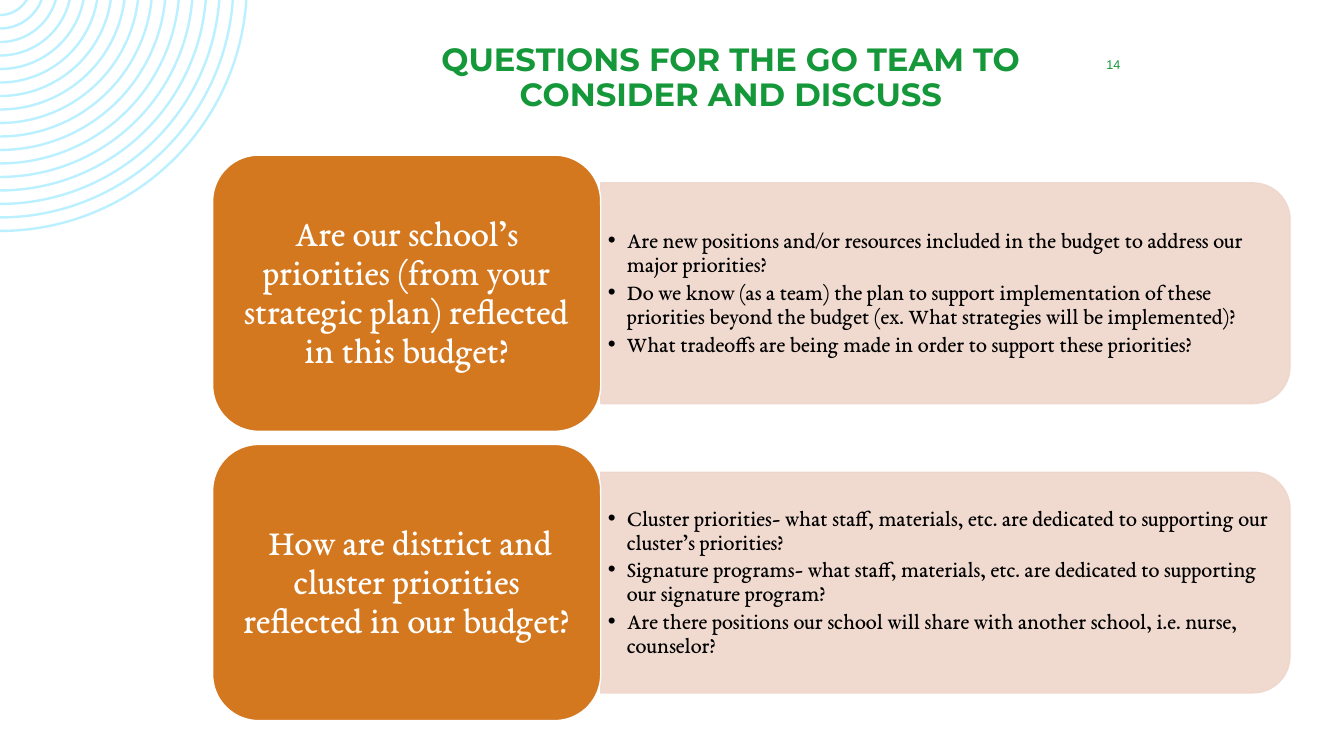
import math
from dataclasses import dataclass

import pptx
import pptx.dml.color
import pptx.enum.shapes
import pptx.enum.text
import pptx.oxml
import pptx.oxml.ns
import pptx.util
from pptx.util import Cm

ALIGN = pptx.enum.text.PP_ALIGN
ANCHOR = pptx.enum.text.MSO_ANCHOR
SHAPE = pptx.enum.shapes.MSO_SHAPE
NAMESPACE = pptx.oxml.ns.nsdecls("a")


@dataclass(frozen=True)
class Theme:
    green: str = "159839"
    orange: str = "D4781F"
    blush: str = "EFD6CB"
    sky: str = "BAF0FF"
    white: str = "FFFFFF"
    black: str = "000000"
    heading_font: str = "Montserrat"
    body_font: str = "EB Garamond"
    number_font: str = "Arial"
    heading_size: float = 23
    question_size: float = 26
    point_size: float = 16
    number_size: float = 9


THEME = Theme()

TOPICS = [
    ("Are our school’s priorities (from your strategic plan) reflected in this budget?", [
        "Are new positions and/or resources included in the budget to address our major priorities?",
        "Do we know (as a team) the plan to support implementation of these priorities "
        "beyond the budget (ex. What strategies will be implemented)?",
        "What tradeoffs are being made in order to support these priorities?",
    ]),
    (" How are district and cluster priorities reflected in our budget?", [
        "Cluster priorities- what staff, materials, etc. are dedicated to supporting our "
        "cluster’s priorities?",
        "Signature programs- what staff, materials, etc. are dedicated to supporting our "
        "signature program?",
        "Are there positions our school will share with another school, i.e. nurse, counselor?",
    ]),
]

CARD_LEFT, CARD_WIDTH, CARD_HEIGHT = 5.36, 9.78, 6.96
PANEL_LEFT, PANEL_WIDTH, PANEL_HEIGHT = 15.14, 17.37, 5.56
LIST_WIDTH, LIST_HEIGHT = 17.12, 5.0
FIRST_MIDDLE, ROW_PITCH = 7.39, 7.29
CORNER = 0.167
RING_COUNT, RING_PITCH, RING_WIDTH = 17, 340, 60
RING_START, RING_RISE = 810, 400


def rgb(color):
    return pptx.dml.color.RGBColor.from_string(color)


def place(shape, left, top, width, height):
    shape.left, shape.top = Cm(left), Cm(top)
    shape.width, shape.height = Cm(width), Cm(height)


def set_frame(shape, side, edge, anchor):
    frame = shape.text_frame
    frame.word_wrap = True
    frame.auto_size = pptx.enum.text.MSO_AUTO_SIZE.NONE
    frame.vertical_anchor = anchor
    frame.margin_left = frame.margin_right = Cm(side)
    frame.margin_top = frame.margin_bottom = Cm(edge)
    return frame


def add_text(para, text, font, size, color, bold=False, align=ALIGN.CENTER):
    para.alignment = align
    para.line_spacing = 0.9
    span = para.add_run()
    span.text = text
    span.font.name = font
    span.font.size = pptx.util.Pt(size)
    span.font.color.rgb = rgb(color)
    span.font.bold = bold


def add_bullet(para, color):
    properties = para._p.get_or_add_pPr()
    properties.set("marL", str(Cm(0.48)))
    properties.set("indent", str(-Cm(0.48)))
    for markup in (
        f'<a:buClr {NAMESPACE}><a:srgbClr val="{color}"/></a:buClr>',
        f'<a:buFont {NAMESPACE} typeface="Arial"/>',
        f'<a:buChar {NAMESPACE} char="•"/>',
    ):
        properties.append(pptx.oxml.parse_xml(markup))


def paint(shape, fill, line=None):
    shape.shadow.inherit = False
    shape.fill.solid()
    shape.fill.fore_color.rgb = rgb(fill)
    if line is None:
        shape.line.fill.background()
    else:
        shape.line.color.rgb = rgb(line)
        shape.line.width = pptx.util.Pt(1)


def bend(edge, radius, start, sweep):
    edge.getparent().replace(edge, pptx.oxml.parse_xml(
        f'<a:arcTo {NAMESPACE} wR="{radius}" hR="{radius}" '
        f'stAng="{round(start * 60000)}" swAng="{round(sweep * 60000)}"/>'))


def add_rings(page):
    def ends(radius):
        reach = round(math.sqrt(radius ** 2 - RING_RISE ** 2))
        return [(reach, 0), (0, radius - RING_RISE)]

    radii = [RING_START + RING_PITCH * ring for ring in range(RING_COUNT)]
    bands = [ends(radius) + ends(radius - RING_WIDTH)[::-1] for radius in radii]
    builder = page.shapes.build_freeform(*bands[0][0], scale=Cm(1) / 1000)
    for index, band in enumerate(bands):
        if index:
            builder.move_to(*band[0])
        builder.add_line_segments(band[1:], close=True)
    rings = builder.convert_to_shape()
    edges = list(rings._element.iter(pptx.oxml.ns.qn("a:lnTo")))
    for radius, outer, inner in zip(radii, edges[0::3], edges[2::3]):
        start = math.degrees(math.asin(RING_RISE / radius))
        bend(outer, radius, start, 90 - start)
        inner_radius = radius - RING_WIDTH
        inner_start = math.degrees(math.asin(RING_RISE / inner_radius))
        bend(inner, inner_radius, 90, inner_start - 90)
    paint(rings, THEME.sky)


def add_title(page, text):
    title = page.shapes.title
    place(title, 8.81, 0.97, 19.23, 2.13)
    frame = set_frame(title, 0.25, 0.13, ANCHOR.TOP)
    add_text(frame.paragraphs[0], text, THEME.heading_font, THEME.heading_size,
             THEME.green, bold=True)


def add_page_number(page, text):
    box = page.shapes.add_textbox(Cm(27.03), Cm(1.27), Cm(2.06), Cm(0.76))
    frame = set_frame(box, 0.25, 0.13, ANCHOR.MIDDLE)
    add_text(frame.paragraphs[0], text, THEME.number_font, THEME.number_size, THEME.green)


def add_panel(page, middle):
    panel = page.shapes.add_shape(SHAPE.ROUND_2_SAME_RECTANGLE, 0, 0, 0, 0)
    place(panel, PANEL_LEFT + (PANEL_WIDTH - PANEL_HEIGHT) / 2, middle - PANEL_WIDTH / 2,
          PANEL_HEIGHT, PANEL_WIDTH)
    panel.rotation = 90
    panel.adjustments[0] = CORNER
    paint(panel, THEME.blush, THEME.blush)
    for color in panel._element.spPr.iter(pptx.oxml.ns.qn("a:srgbClr")):
        color.append(pptx.oxml.parse_xml(f'<a:alpha {NAMESPACE} val="90000"/>'))


def add_points(body, points, middle):
    body._element.getparent().append(body._element)
    place(body, PANEL_LEFT, middle - LIST_HEIGHT / 2, LIST_WIDTH, LIST_HEIGHT)
    frame = set_frame(body, 0.18, 0.08, ANCHOR.MIDDLE)
    for index, point in enumerate(points):
        para = frame.add_paragraph() if index else frame.paragraphs[0]
        para.level = 1
        para.space_before = pptx.util.Pt(2.4 if index else 0)
        add_text(para, point, THEME.body_font, THEME.point_size, THEME.black, align=ALIGN.LEFT)
        add_bullet(para, THEME.black)


def add_question(page, text, middle):
    card = page.shapes.add_shape(SHAPE.ROUNDED_RECTANGLE, 0, 0, 0, 0)
    place(card, CARD_LEFT, middle - CARD_HEIGHT / 2, CARD_WIDTH, CARD_HEIGHT)
    card.adjustments[0] = CORNER
    paint(card, THEME.orange, THEME.white)
    frame = set_frame(card, 0.28, 0.13, ANCHOR.MIDDLE)
    add_text(frame.paragraphs[0], text, THEME.body_font, THEME.question_size, THEME.white)


def main():
    deck = pptx.Presentation()
    deck.slide_width, deck.slide_height = Cm(33.87), Cm(19.05)
    page = deck.slides.add_slide(deck.slide_layouts.get_by_name("Two Content"))
    add_rings(page)
    add_title(page, "QUESTIONS FOR THE GO TEAM TO CONSIDER AND DISCUSS")
    add_page_number(page, "14")
    bodies = [page.placeholders[1], page.placeholders[2]]
    for row, (body, (question, points)) in enumerate(zip(bodies, TOPICS)):
        middle = FIRST_MIDDLE + row * ROW_PITCH
        add_panel(page, middle)
        add_points(body, points, middle)
        add_question(page, question, middle)
    deck.save("out.pptx")


if __name__ == "__main__":
    main()
